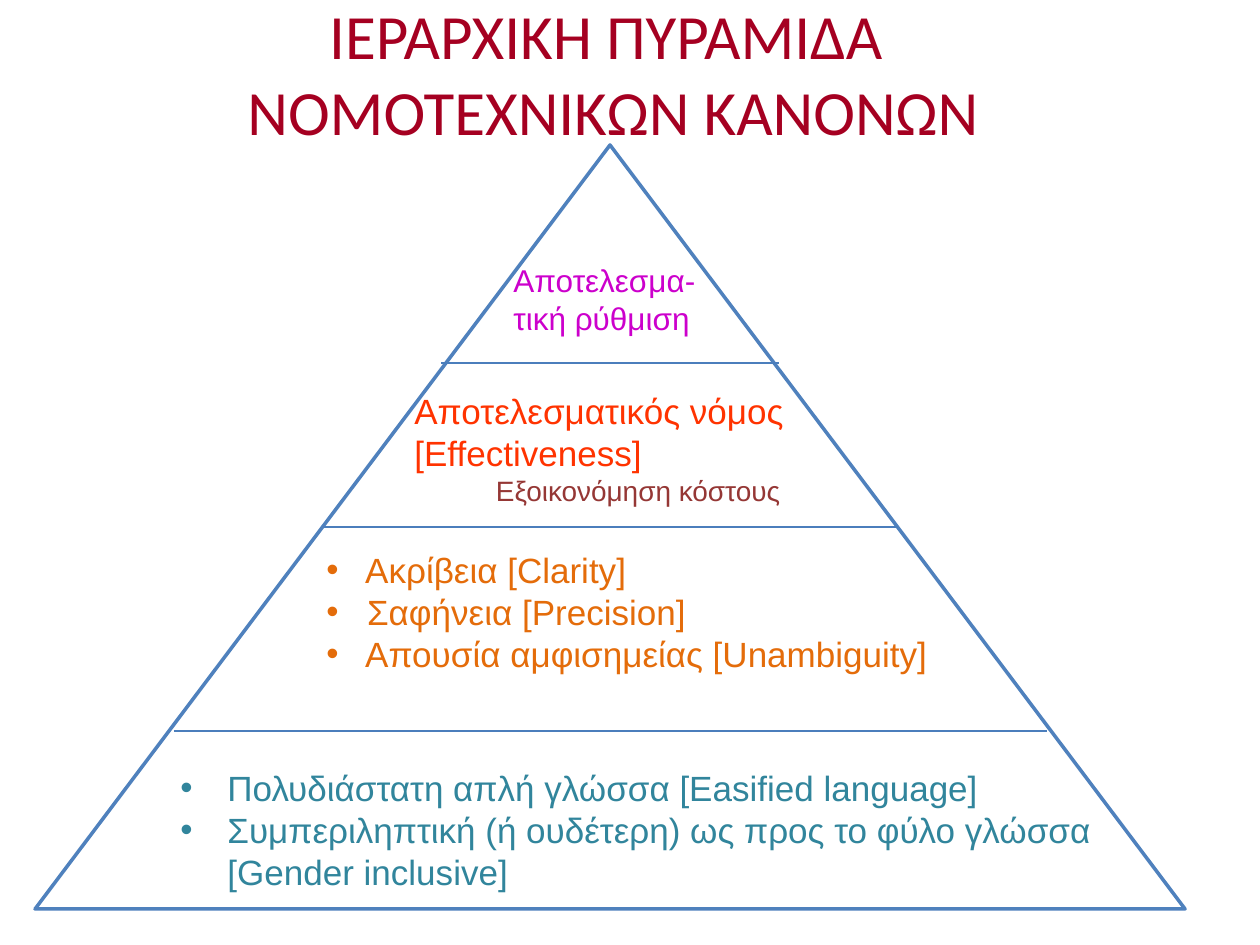
"""Build a slide with the four-tier pyramid of legislative drafting rules."""
from dataclasses import dataclass

from lxml import etree
from pptx import Presentation
from pptx import util as u
from pptx.dml.color import RGBColor
from pptx.enum import shapes, text
from pptx.oxml.ns import qn

EMU_PER_PX = 914400 / 126


@dataclass(frozen=True)
class Theme:
    """Hold the colours, fonts and type sizes of the slide."""
    heading_font: str = "Calibri"
    body_font: str = "Arial"
    heading: str = "A50021"
    paper: str = "FFFFFF"
    outline: str = "4F81BD"
    divider: str = "4B7EBC"
    peak: str = "CC00CC"
    law: str = "FF3300"
    cost: str = "953735"
    clarity: str = "E46C0A"
    language: str = "31859C"
    heading_size: int = 36
    body_size: int = 20
    peak_size: int = 18
    cost_size: int = 16


THEME = Theme()


def px(length):
    """Turn whole pixels into EMU."""
    return u.Emu(round(length * EMU_PER_PX))


def rgb(value):
    """Turn a hex string into a colour."""
    return RGBColor.from_string(value)


def set_all(target, values):
    """Set each named attribute on the target."""
    for name, value in values.items():
        setattr(target, name, value)


def add_pyramid(page, left, top, width, height):
    """Draw the outlined triangle."""
    pyramid = page.shapes.add_shape(
        shapes.MSO_SHAPE.ISOSCELES_TRIANGLE, *map(px, (left, top, width, height)))
    pyramid.shadow.inherit = False
    pyramid.fill.solid()
    pyramid.fill.fore_color.rgb = rgb(THEME.paper)
    pyramid.line.color.rgb = rgb(THEME.outline)
    pyramid.line.width = u.Pt(2)


def add_divider(page, left, right, y):
    """Draw a level line between two tiers."""
    divider = page.shapes.add_connector(
        shapes.MSO_CONNECTOR.STRAIGHT, px(left), px(y), px(right), px(y))
    divider.line.color.rgb = rgb(THEME.divider)
    divider.line.width = u.Pt(0.75)
    etree.SubElement(divider._element.spPr, qn("a:effectLst"))


def add_text_box(page, frame, **format_values):
    """Add an empty wrapping text box and return its text frame."""
    box = page.shapes.add_textbox(*map(px, frame)).text_frame
    set_all(box, {"word_wrap": True, **format_values})
    return box


def add_para(box, wording, color, size, font=THEME.body_font, **format_values):
    """Write one paragraph, reusing the first while it is empty."""
    first = box.paragraphs[0]
    para = box.add_paragraph() if first.text else first
    para.text = wording
    set_all(para, format_values)
    for span in para.runs:
        set_all(span.font, {"name": font, "size": u.Pt(size)})
        span.font.color.rgb = rgb(color)
    return para


def set_indent(para, margin, hanging=0, bullet=None):
    """Set the margin and hanging indent, with an optional bullet."""
    props = para._p.get_or_add_pPr()
    props.set("marL", str(px(margin)))
    props.set("indent", str(-px(hanging)))
    if bullet:
        etree.SubElement(props, qn("a:buFont")).set("typeface", THEME.body_font)
        etree.SubElement(props, qn("a:buChar")).set("char", bullet)


def add_bullets(page, frame, items, color, margin, hanging):
    """Add a tier whose text is a bulleted list."""
    box = add_text_box(page, frame, auto_size=text.MSO_AUTO_SIZE.SHAPE_TO_FIT_TEXT)
    for item in items:
        para = add_para(box, item, color, THEME.body_size, level=1)
        set_indent(para, margin, hanging, "•")


def main():
    """Build and save the slide."""
    deck = Presentation()
    set_all(deck, {"slide_width": px(1260), "slide_height": px(945)})
    page = deck.slides.add_slide(deck.slide_layouts[6])
    grow = {"auto_size": text.MSO_AUTO_SIZE.SHAPE_TO_FIT_TEXT}

    heading = add_text_box(page, (44, 0, 1138, 145),
                           vertical_anchor=text.MSO_ANCHOR.MIDDLE)
    add_para(heading, "ΙΕΡΑΡΧΙΚΗ ΠΥΡΑΜΙΔΑ \vΝΟΜΟΤΕΧΝΙΚΩΝ ΚΑΝΟΝΩΝ", THEME.heading,
             THEME.heading_size, THEME.heading_font, alignment=text.PP_ALIGN.CENTER)

    add_pyramid(page, 35, 145, 1150, 764)
    for left, right, y in ((323, 898, 527), (441, 779, 363), (174, 1047, 731)):
        add_divider(page, left, right, y)

    peak = add_text_box(page, (501, 255, 218, 89), **grow)
    add_para(peak, "Αποτελεσμα-τική ρύθμιση", THEME.peak, THEME.peak_size)

    law = add_text_box(page, (402, 383, 417, 131), **grow)
    add_para(law, "Αποτελεσματικός νόμος [Effectiveness]", THEME.law, THEME.body_size)
    cost = add_para(law, "Εξοικονόμηση κόστους ", THEME.cost, THEME.cost_size,
                    level=1, alignment=text.PP_ALIGN.CENTER)
    set_indent(cost, 63)

    add_bullets(page, (282, 542, 694, 140),
                (" Ακρίβεια [Clarity]", " Σαφήνεια [Precision]",
                 " Απουσία αμφισημείας [Unambiguity]"),
                THEME.clarity, 63, 31)
    add_bullets(page, (105, 760, 1002, 140),
                ("Πολυδιάστατη απλή γλώσσα [Easified language]",
                 "Συμπεριληπτική (ή ουδέτερη) ως προς το φύλο γλώσσα [Gender inclusive]"),
                THEME.language, 110, 47)
    deck.save("out.pptx")


if __name__ == "__main__":
    main()
